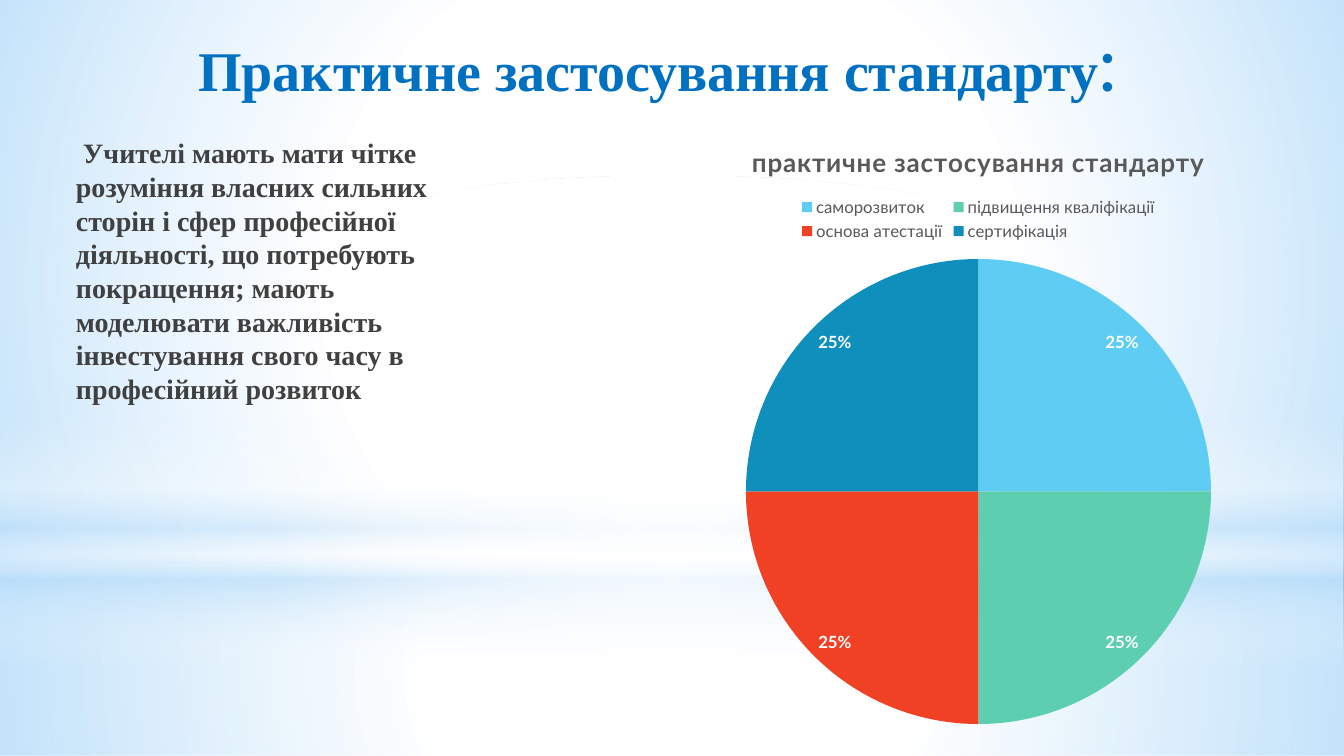
"""Build a slide with a text column and a pie chart on the use of the standard."""
from lxml import etree
from pptx import Presentation
from pptx.chart.data import CategoryChartData
from pptx.dml.color import RGBColor
from pptx.enum.chart import XL_CHART_TYPE, XL_LABEL_POSITION, XL_LEGEND_POSITION
from pptx.enum.shapes import MSO_SHAPE
from pptx.enum.text import PP_ALIGN
from pptx.oxml import parse_xml
from pptx.util import Pt

RECT, OVAL = MSO_SHAPE.RECTANGLE, MSO_SHAPE.OVAL
PIE, TOP = XL_CHART_TYPE.PIE, XL_LEGEND_POSITION.TOP
INSIDE_END = XL_LABEL_POSITION.INSIDE_END
LEFT, CENTER = PP_ALIGN.LEFT, PP_ALIGN.CENTER
A_NS = "http://schemas.openxmlformats.org/drawingml/2006/main"

SERIF, SANS = "Times New Roman", "Lato"
COLORS = {
    "white": "FFFFFF", "sky": "B4DCFA", "title": "0070C0",
    "body": "404040", "chart": "595959",
}
HEADING = "Практичне застосування стандарту"
BODY = [
    " Учителі мають мати чітке",
    "розуміння власних сильних",
    "сторін і сфер професійної",
    "діяльності, що потребують",
    "покращення; мають",
    "моделювати важливість",
    "інвестування свого часу в",
    "професійний розвиток",
]
CHART_TITLE = "практичне застосування стандарту"
SLICES = [
    ("саморозвиток", 25, "5ECCF3"),
    ("підвищення кваліфікації", 25, "5DCEAF"),
    ("основа атестації", 25, "F14124"),
    ("сертифікація", 25, "0E8FBC"),
]
CIRCLE = ('<a:path path="circle"><a:fillToRect l="50000" t="50000" '
          'r="50000" b="50000"/></a:path>')
DOWN = '<a:lin ang="5400000" scaled="0"/>'
BACKDROP = [
    (RECT, (0, 562, 1344, 194), CIRCLE,
     [(0, "white", 91), (37, "white", 76), (100, "sky", 79)]),
    (RECT, (0, 0, 1344, 562), CIRCLE,
     [(0, "white", 89), (48, "white", 62), (100, "sky", 79)]),
    (RECT, (0, 415, 1344, 252), DOWN,
     [(0, "white", 0), (29, "white", 30), (45, "sky", 40),
      (55, "white", 26), (65, "sky", 60), (100, "white", 0)]),
    (OVAL, (0, 176, 1344, 562), CIRCLE,
     [(0, "white", 100), (56, "white", 0)]),
]


def px(n):
    return round(n * 914400 / 100.8)


def box(*lengths):
    return [px(n) for n in lengths]


def style(font, size, color, name=SANS, bold=False):
    font.size, font.name, font.bold = Pt(size), name, bold
    font.color.rgb = RGBColor.from_string(COLORS[color])


def add_text(s, area, runs, align=LEFT, spacing=None):
    tf = s.shapes.add_textbox(*box(*area)).text_frame
    tf.word_wrap = True
    p = tf.paragraphs[0]
    p.alignment, p.line_spacing = align, spacing
    for lines, fmt in runs:
        for i, line in enumerate(lines):
            if i:
                p.add_line_break()
            r = p.add_run()
            r.text = line
            style(r.font, **fmt)


def add_glow(s, kind, area, direction, stops):
    sp = s.shapes.add_shape(kind, *box(*area))
    sp.shadow.inherit = False
    sp.line.fill.background()
    sp.fill.background()
    marks = "".join(
        f'<a:gs pos="{pos * 1000}"><a:srgbClr val="{COLORS[color]}">'
        f'<a:alpha val="{alpha * 1000}"/></a:srgbClr></a:gs>'
        for pos, color, alpha in stops)
    grad = parse_xml(f'<a:gradFill xmlns:a="{A_NS}" rotWithShape="1">'
                     f'<a:gsLst>{marks}</a:gsLst>{direction}</a:gradFill>')
    spPr = sp.element.spPr
    spPr.replace(spPr.find(etree.QName(A_NS, "noFill").text), grad)


def add_pie(s, area):
    data = CategoryChartData()
    data.categories = [name for name, _, _ in SLICES]
    data.add_series(CHART_TITLE, [value for _, value, _ in SLICES])
    chart = s.shapes.add_chart(PIE, *box(*area), data).chart
    style(chart.font, 10, "chart")
    chart.has_title = True
    p = chart.chart_title.text_frame.paragraphs[0]
    r = p.add_run()
    r.text = CHART_TITLE
    style(r.font, 18.6, "chart", bold=True)
    r.font.language_id = None
    r._r.get_or_add_rPr().set("spc", "50")
    chart.has_legend = True
    chart.legend.position = TOP
    chart.legend.include_in_layout = False
    style(chart.legend.font, 12, "chart")
    plot = chart.plots[0]
    plot.vary_by_categories = True
    for i, (_, _, color) in enumerate(SLICES):
        fill = plot.series[0].points[i].format.fill
        fill.solid()
        fill.fore_color.rgb = RGBColor.from_string(color)
    plot.has_data_labels = True
    labels = plot.data_labels
    labels.show_percentage, labels.show_value = True, False
    labels.number_format, labels.number_format_is_linked = "0%", False
    labels.position = INSIDE_END
    style(labels.font, 12, "white", bold=True)


def main():
    prs = Presentation()
    prs.slide_width, prs.slide_height = box(1344, 756)
    s = prs.slides.add_slide(prs.slide_layouts[6])
    for layer in BACKDROP:
        add_glow(s, *layer)
    add_text(s, (66, 131, 655, 528),
             [(BODY, dict(size=20, color="body", name=SERIF, bold=True))],
             spacing=Pt(24))
    add_pie(s, (670, 121, 617, 617))
    add_text(s, (51, 11, 1214, 102),
             [([HEADING], dict(size=40, color="title", name=SERIF, bold=True)),
              ([":"], dict(size=54, color="title"))],
             align=CENTER)
    prs.save("out.pptx")


if __name__ == "__main__":
    main()
